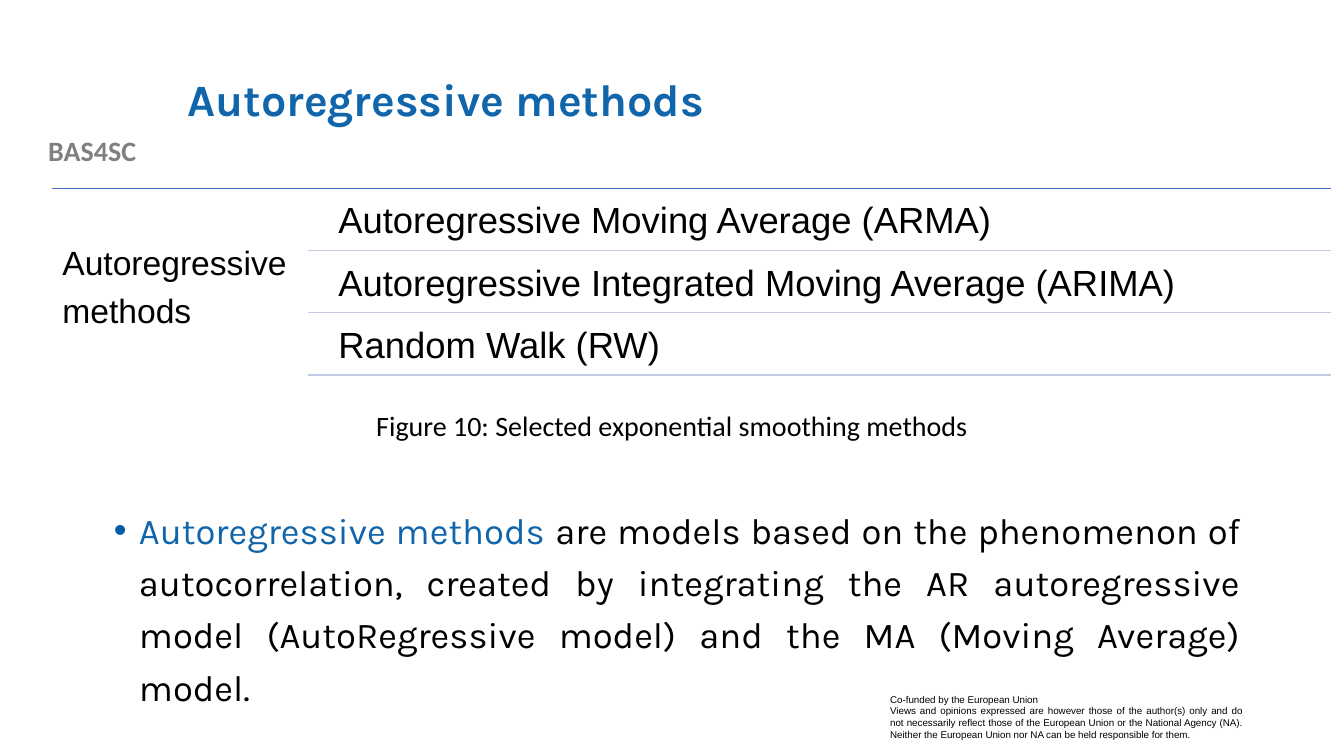
from pptx import Presentation
from pptx.dml.color import RGBColor
from pptx.enum.shapes import MSO_CONNECTOR, MSO_SHAPE
from pptx.enum.text import MSO_ANCHOR as Anchor, PP_ALIGN as Align
from pptx.oxml import parse_xml
from pptx.oxml.ns import nsdecls
from pptx.util import Inches, Pt

THEME = {
    "heading": "1065AB", "bullet": "015BA6", "text": "000000",
    "label": "808080", "paper": "FFFFFF", "rule": "4472C4", "row_rule": "C1C9E4",
    "title_size": 32, "body_size": 26, "group_size": 24,
    "caption_size": 20, "note_size": 7,
    "display": "Karla", "plain": "Arial", "office": "Calibri",
}

presentation = Presentation()
presentation.slide_width, presentation.slide_height = Inches(13.33), Inches(7.5)
slide = presentation.slides.add_slide(presentation.slide_layouts[6])


def add_text(paragraphs, left, top, width, height, *, size, font="plain", color="text",
             bold=False, align=Align.LEFT, anchor=Anchor.TOP, spacing=1.0,
             inset=(0.1, 0.05), fill=None, bullet=None):
    """Each paragraph is a list of (text, colour) runs or one plain string."""
    box = (Inches(left), Inches(top), Inches(width), Inches(height))
    if fill:
        shape = slide.shapes.add_shape(MSO_SHAPE.RECTANGLE, *box)
        shape.shadow.inherit = False
        shape.fill.solid()
        shape.fill.fore_color.rgb = RGBColor.from_string(THEME[fill])
        shape.line.fill.background()
    else:
        shape = slide.shapes.add_textbox(*box)
    frame = shape.text_frame
    frame.word_wrap = True
    frame.vertical_anchor = anchor
    frame.margin_left = frame.margin_right = Inches(inset[0])
    frame.margin_top = frame.margin_bottom = Inches(inset[1])
    for index, runs in enumerate(paragraphs):
        paragraph = frame.add_paragraph() if index else frame.paragraphs[0]
        paragraph.alignment = align
        paragraph.line_spacing = spacing
        if bullet:
            properties = paragraph._p.get_or_add_pPr()
            properties.set("marL", str(Inches(0.25)))
            properties.set("indent", str(-Inches(0.25)))
            for element in (f'<a:buClr {nsdecls("a")}><a:srgbClr val="{THEME["bullet"]}"/></a:buClr>',
                            f'<a:buFont {nsdecls("a")} typeface="Arial"/>',
                            f'<a:buChar {nsdecls("a")} char="{bullet}"/>'):
                properties.append(parse_xml(element))
        for text, run_color in [(runs, color)] if isinstance(runs, str) else runs:
            run = paragraph.add_run()
            run.text = text
            run.font.name = THEME[font]
            run.font.size = Pt(THEME[size])
            run.font.bold = bold
            run.font.color.rgb = RGBColor.from_string(THEME[run_color])


def add_rule(left, right, top, color):
    line = slide.shapes.add_connector(MSO_CONNECTOR.STRAIGHT, Inches(left), Inches(top),
                                      Inches(right), Inches(top))
    line.line.color.rgb = RGBColor.from_string(THEME[color])
    line.line.width = Pt(1)
    line._element.spPr.append(parse_xml(f'<a:effectLst {nsdecls("a")}/>'))


# Project label and funding note
add_text(["BAS4SC"], 0, 1.28, 1.83, 0.44, size="caption_size", font="office",
         color="label", bold=True, align=Align.CENTER)
add_text(["Co-funded by the European Union",
          "Views and opinions expressed are however those of the author(s) only and do not "
          "necessarily reflect those of the European Union or the National Agency (NA). "
          "Neither the European Union nor NA can be held responsible for them."],
         8.73, 6.83, 3.69, 0.57, size="note_size", align=Align.JUSTIFY, fill="paper")

# Title
add_text(["Autoregressive methods"], 1.76, 0.4, 10.66, 1.22, size="title_size",
         font="display", color="heading", bold=True, anchor=Anchor.MIDDLE, spacing=0.9)

# Explanation
add_text([[("Autoregressive methods ", "heading"),
           ("are models based on the phenomenon of autocorrelation, created by integrating "
            "the AR autoregressive model (AutoRegressive model) and the MA (Moving Average) "
            "model.", "text")]],
         1.03, 4.9, 11.38, 1.88, size="body_size", font="display",
         align=Align.JUSTIFY, spacing=1.2, bullet="•")

# Method list: group name on the left, one ruled row per method
list_left, list_right, list_top, list_height = 0.52, 13.2, 1.87, 1.85
group_width = (list_right - list_left) / 5
rows_left = list_left + group_width
methods = ["Autoregressive Moving Average (ARMA)",
           "Autoregressive Integrated Moving Average (ARIMA)",
           "Random Walk (RW)"]
row_height = list_height / len(methods)
text_left = rows_left + 0.19

add_rule(list_left, list_right, list_top, "rule")
add_text(["Autoregressive methods"], list_left, list_top, group_width, list_height,
         size="group_size", anchor=Anchor.MIDDLE, spacing=1.2, inset=(0.1, 0.1))
for row, method in enumerate(methods):
    row_top = list_top + row * row_height
    add_text([method], text_left, row_top + 0.03, list_right - text_left, row_height - 0.03,
             size="body_size", spacing=0.9, inset=(0.11, 0.11))
    add_rule(rows_left, list_right, row_top + row_height, "row_rule")

# Caption
add_text(["Figure 10: Selected exponential smoothing methods"], 3.49, 4, 6.35, 0.44,
         size="caption_size", font="office", align=Align.CENTER)

presentation.save("out.pptx")
